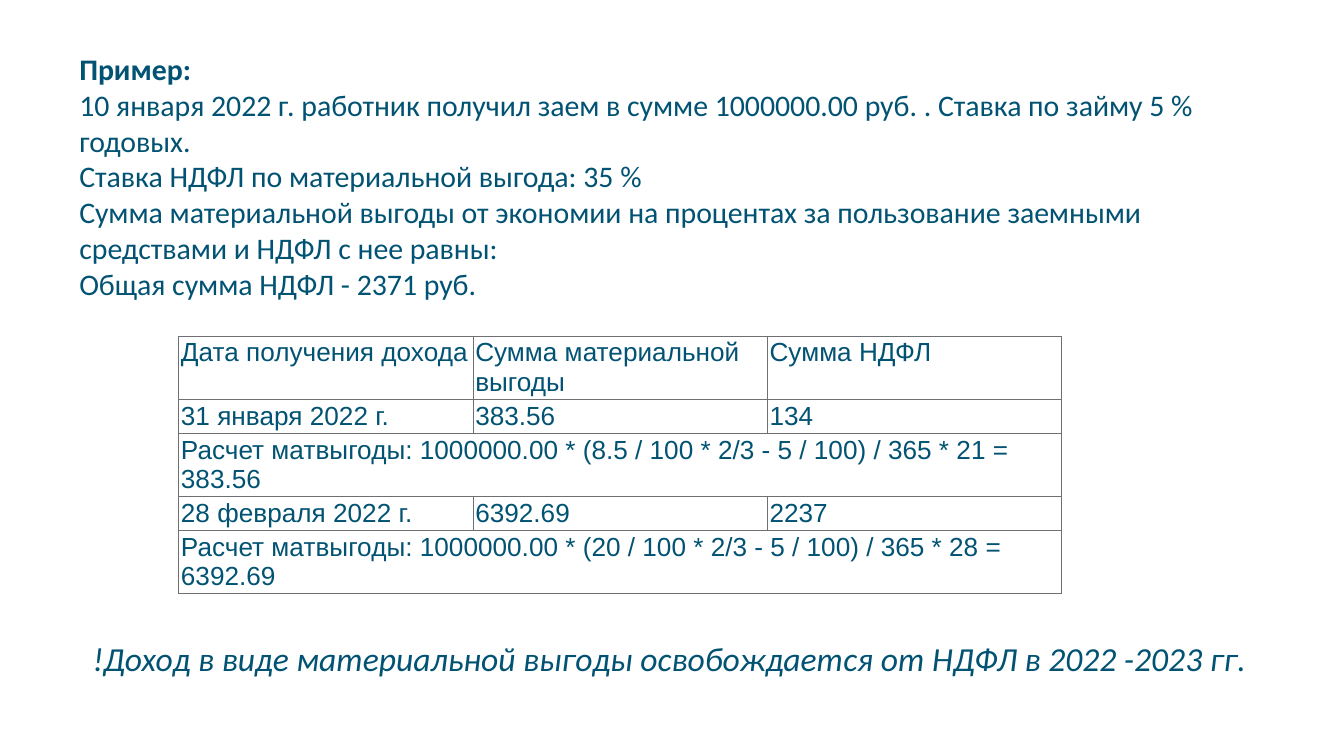
import pptx
import pptx.dml.color
import pptx.enum.text
import pptx.oxml
import pptx.oxml.ns
import pptx.util

Inches = pptx.util.Inches
Pt = pptx.util.Pt

TEAL = pptx.dml.color.RGBColor(0x02, 0x53, 0x73)
GRAY = pptx.dml.color.RGBColor(0x6E, 0x6F, 0x73)

BLANK_LAYOUT = 6
TEXT_LEFT, TEXT_WIDTH = 0.59, 8.98
COLUMN_WIDTH = 2.19
CELL_MARGIN = Pt(1.2)
SINGLE_LINE_HEIGHT, DOUBLE_LINE_HEIGHT = 0.25, 0.47

EXAMPLE = [
    "Пример:",
    "10 января 2022 г. работник получил заем в сумме 1000000.00 руб. . "
    "Ставка по займу 5 % годовых.\n"
    "Ставка НДФЛ по материальной выгода: 35 %\n"
    "Сумма материальной выгоды от экономии на процентах за пользование "
    "заемными средствами и НДФЛ с нее равны:",
    "Общая сумма НДФЛ - 2371 руб.",
]
NOTE = "!Доход в виде материальной выгоды освобождается от НДФЛ в 2022 -2023 гг."

# A row with a single entry spans all columns.
INCOME_ROWS = [
    ["Дата получения дохода", "Сумма материальной выгоды", "Сумма НДФЛ"],
    ["31 января 2022 г.", "383.56", "134"],
    ["Расчет матвыгоды: 1000000.00 * (8.5 / 100 * 2/3 - 5 / 100) / 365 * 21 = 383.56"],
    ["28 февраля 2022 г.", "6392.69", "2237"],
    ["Расчет матвыгоды: 1000000.00 * (20 / 100 * 2/3 - 5 / 100) / 365 * 28 = 6392.69"],
]
ROW_HEIGHTS = [DOUBLE_LINE_HEIGHT] + [SINGLE_LINE_HEIGHT, DOUBLE_LINE_HEIGHT] * 2


def format_font(font, name, size):
    font.name = name
    font.size = Pt(size)
    font.color.rgb = TEAL


def add_text(slide, top, height, paragraphs, size):
    """Add a full-width text box and return its text frame."""
    box = slide.shapes.add_textbox(
        Inches(TEXT_LEFT), Inches(top), Inches(TEXT_WIDTH), Inches(height))
    frame = box.text_frame
    frame.word_wrap = True
    for index, text in enumerate(paragraphs):
        paragraph = frame.add_paragraph() if index else frame.paragraphs[0]
        paragraph.text = text
        format_font(paragraph.font, "Calibri", size)
    return frame


def add_borders(cell):
    properties = cell._tc.get_or_add_tcPr()
    for side in ("lnL", "lnR", "lnT", "lnB"):
        properties.append(pptx.oxml.parse_xml(
            f'<a:{side} {pptx.oxml.ns.nsdecls("a")} w="{Pt(0.6)}">'
            f'<a:solidFill><a:srgbClr val="{GRAY}"/></a:solidFill></a:{side}>'))


def format_cell(cell):
    add_borders(cell)
    cell.fill.background()
    cell.margin_left = cell.margin_right = CELL_MARGIN
    cell.margin_top = cell.margin_bottom = CELL_MARGIN
    format_font(cell.text_frame.paragraphs[0].font, "Arial", 14)


def add_income_table(slide, left, top):
    column_count = len(INCOME_ROWS[0])
    table = slide.shapes.add_table(
        len(INCOME_ROWS), column_count, Inches(left), Inches(top),
        Inches(COLUMN_WIDTH * column_count), Inches(sum(ROW_HEIGHTS))).table
    table.first_row = table.horz_banding = False
    for column in table.columns:
        column.width = Inches(COLUMN_WIDTH)
    for row_index, (texts, height) in enumerate(zip(INCOME_ROWS, ROW_HEIGHTS)):
        row = table.rows[row_index]
        row.height = Inches(height)
        for cell, text in zip(row.cells, texts):
            cell.text = text
        for cell in row.cells:
            format_cell(cell)
        if len(texts) == 1:
            table.cell(row_index, 0).merge(table.cell(row_index, column_count - 1))


def main():
    presentation = pptx.Presentation()
    presentation.slide_width = Inches(10)
    presentation.slide_height = presentation.slide_width * 9 // 16
    slide = presentation.slides.add_slide(presentation.slide_layouts[BLANK_LAYOUT])

    add_income_table(slide, 1.33, 2.5)

    example = add_text(slide, 0.37, 1.88, EXAMPLE, 16)
    example.vertical_anchor = pptx.enum.text.MSO_ANCHOR.MIDDLE
    example.margin_left = example.margin_right = 0
    example.margin_top = example.margin_bottom = 0
    example.paragraphs[0].font.bold = True

    note = add_text(slide, 4.7, 0.4, [NOTE], 18)
    note.paragraphs[0].font.italic = True

    presentation.save("out.pptx")


if __name__ == "__main__":
    main()
